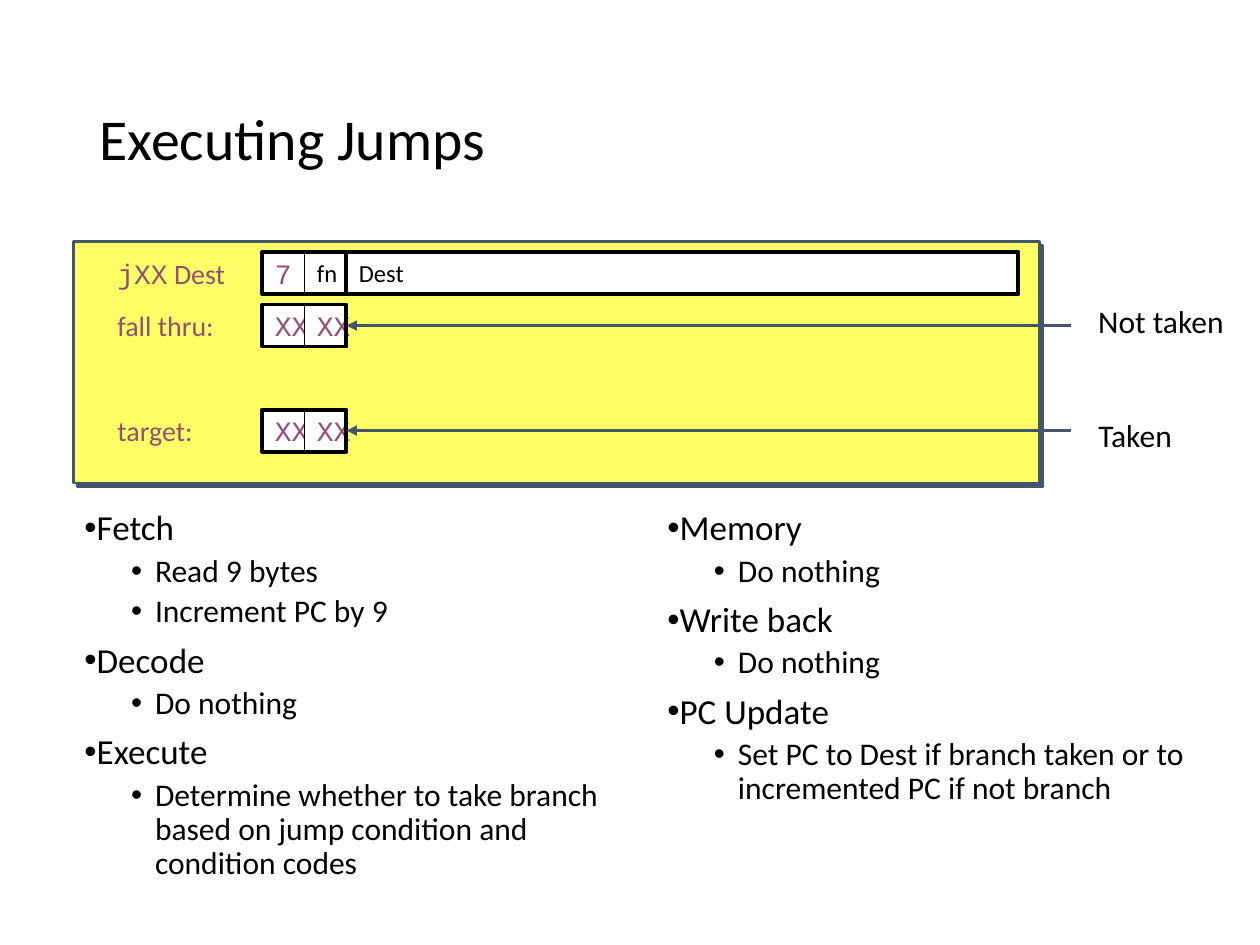
from lxml import etree
from pptx import Presentation
from pptx.dml.color import RGBColor
from pptx.enum.shapes import MSO_CONNECTOR, MSO_SHAPE
from pptx.enum.text import MSO_ANCHOR, MSO_AUTO_SIZE, PP_ALIGN
from pptx.oxml.ns import qn
from pptx.util import Inches, Pt

RECTANGLE = MSO_SHAPE.RECTANGLE
STRAIGHT = MSO_CONNECTOR.STRAIGHT
LEFT, MIDDLE, TOP = PP_ALIGN.LEFT, MSO_ANCHOR.MIDDLE, MSO_ANCHOR.TOP
FIXED, GROW = MSO_AUTO_SIZE.NONE, MSO_AUTO_SIZE.SHAPE_TO_FIT_TEXT
RIGHT_SIDE = 3

SANS, MONO = "Calibri", "Courier New"
COLORS = {"ink": "000000", "paper": "FFFFFF", "panel": "FFFF66",
          "slate": "44546A", "code": "954F72"}

SLIDE_W, SLIDE_H = Inches(9.99), Inches(7.49)
CELL = SLIDE_W / 30  # one byte half is one grid cell
LABEL_COL, BYTE_COL, DEST_COL, ARROW_COL, CALLOUT_COL = 2.5, 6.25, 8.25, 25.5, 26
JUMP_ROW, FALL_ROW, TARGET_ROW = 6, 7.25, 9.75

STAGES_LEFT = [
    ("Fetch", ["Read 9 bytes", "Increment PC by 9"]),
    ("Decode", ["Do nothing"]),
    ("Execute", ["Determine whether to take branch based on jump condition "
                 "and condition codes"]),
]
STAGES_RIGHT = [
    ("Memory", ["Do nothing"]),
    ("Write back", ["Do nothing"]),
    ("PC Update", ["Set PC to Dest if branch taken or to incremented PC "
                   "if not branch"]),
]


def grid(*cells):
    return [round(cell * CELL) for cell in cells]


def place(placeholder, *cells):
    (placeholder.left, placeholder.top,
     placeholder.width, placeholder.height) = grid(*cells)


def rgb(name):
    return RGBColor.from_string(COLORS[name])


def style(run, size, font=SANS, color="ink"):
    run.font.size, run.font.name = Pt(size), font
    run.font.color.rgb = rgb(color)


def write(frame, pieces, size, color="ink", anchor=MIDDLE):
    """Fill a one-line frame with (text, font) pieces."""
    frame.word_wrap = False
    frame.vertical_anchor = anchor
    paragraph = frame.paragraphs[0]
    paragraph.alignment = LEFT
    for text, font in pieces:
        run = paragraph.add_run()
        run.text = text
        style(run, size, font, color)


def add_box(shapes, cells, line_width, fill="paper", line="ink"):
    box = shapes.add_shape(RECTANGLE, *grid(*cells))
    box.shadow.inherit = False
    if fill:
        box.fill.solid()
        box.fill.fore_color.rgb = rgb(fill)
    else:
        box.fill.background()
    box.line.color.rgb = rgb(line)
    box.line.width = Pt(line_width)
    return box


def add_panel(slide):
    panel = add_box(slide.shapes, (1.75, 5.75, 23, 5.75), 1.5, "panel", "slate")
    effects = panel._element.spPr.find(qn("a:effectLst"))
    shadow = etree.SubElement(effects, qn("a:outerShdw"), dist=str(Pt(2.8)),
                              dir="2700000", algn="ctr", rotWithShape="0")
    etree.SubElement(shadow, qn("a:srgbClr"), val=COLORS["slate"])


def add_label(slide, row, pieces):
    label = slide.shapes.add_textbox(*grid(LABEL_COL, row, 3.66, 1))
    write(label.text_frame, pieces, 16, "code")


def add_byte(slide, row, halves):
    """Draw two half-byte cells and return the heavy outline around them."""
    byte = slide.shapes.add_group_shape().shapes
    for column, (text, font, size, color) in enumerate(halves):
        half = add_box(byte, (BYTE_COL + column, row, 1, 1), 0.5)
        write(half.text_frame, [(text, font)], size, color)
    return add_box(byte, (BYTE_COL, row, 2, 1), 2.25, fill=None)


def add_arrow(slide, row, byte):
    x, y = grid(ARROW_COL, row + 0.5)
    arrow = slide.shapes.add_connector(STRAIGHT, x, y, *grid(DEST_COL, row + 0.5))
    arrow.end_connect(byte, RIGHT_SIDE)
    arrow.line.color.rgb = rgb("slate")
    arrow.line.width = Pt(1.5)
    etree.SubElement(arrow.line._get_or_add_ln(), qn("a:tailEnd"), type="triangle")
    etree.SubElement(arrow._element.spPr, qn("a:effectLst"))


def add_callout(slide, row, width, text):
    callout = slide.shapes.add_textbox(*grid(CALLOUT_COL, row, width, 1.1))
    frame = callout.text_frame
    frame.margin_left = frame.margin_right = Inches(0.05)
    frame.margin_top = frame.margin_bottom = Inches(0.05)
    write(frame, [(text, SANS)], 18, anchor=TOP)
    frame.auto_size = GROW


def set_bullet(paragraph, margin, indent):
    props = paragraph._p.get_or_add_pPr()
    props.set("marL", str(Inches(margin)))
    props.set("indent", str(Inches(indent)))
    etree.SubElement(props, qn("a:buFont"), typeface="Arial")
    etree.SubElement(props, qn("a:buChar"), char="•")


def fill_title(title, text):
    place(title, 2.07, 1.2, 25.85, 4.35)
    frame = title.text_frame
    frame.text = text
    frame.auto_size, frame.vertical_anchor = FIXED, MIDDLE
    heading = frame.paragraphs[0]
    heading.alignment, heading.line_spacing = LEFT, 0.9
    style(heading.runs[0], 33)


def fill_stages(body, column, stages):
    place(body, column, 12, 13.35, 11.1)
    frame = body.text_frame
    lines = [(level, text) for stage, steps in stages
             for level, text in [(0, stage)] + [(1, step) for step in steps]]
    frame.text = "\n".join(text for _, text in lines)
    frame.auto_size, frame.vertical_anchor = FIXED, TOP
    for paragraph, (level, _) in zip(frame.paragraphs, lines):
        paragraph.level = level
        paragraph.line_spacing = 0.9
        paragraph.space_before = Pt(3.8 if level else 7.5)
        set_bullet(paragraph, *((0.56, -0.19) if level else (0, 0)))
        style(paragraph.runs[0], 18 if level else 20)


def main():
    deck = Presentation()
    deck.slide_width, deck.slide_height = SLIDE_W, SLIDE_H
    slide = deck.slides.add_slide(deck.slide_layouts.get_by_name("Two Content"))
    title, left_body, right_body = slide.placeholders
    fill_title(title, "Executing Jumps")
    fill_stages(left_body, 1.71, STAGES_LEFT)
    fill_stages(right_body, 15.59, STAGES_RIGHT)

    add_panel(slide)
    add_label(slide, JUMP_ROW, [("jXX", MONO), (" Dest", SANS)])
    add_byte(slide, JUMP_ROW, [("7", MONO, 16, "code"), ("fn", SANS, 14, "ink")])
    destination = add_box(slide.shapes, (DEST_COL, JUMP_ROW, 16, 1), 2.25)
    write(destination.text_frame, [("Dest", SANS)], 14)

    unknown = ("XX", MONO, 16, "code")
    for row, label in ((FALL_ROW, "fall thru:"), (TARGET_ROW, "target:")):
        byte = add_byte(slide, row, [unknown, unknown])
        add_label(slide, row, [(label, SANS)])
        add_arrow(slide, row, byte)
    add_callout(slide, 7.05, 3.72, "Not taken")
    add_callout(slide, 9.75, 2.46, "Taken")
    deck.save("out.pptx")


if __name__ == "__main__":
    main()
